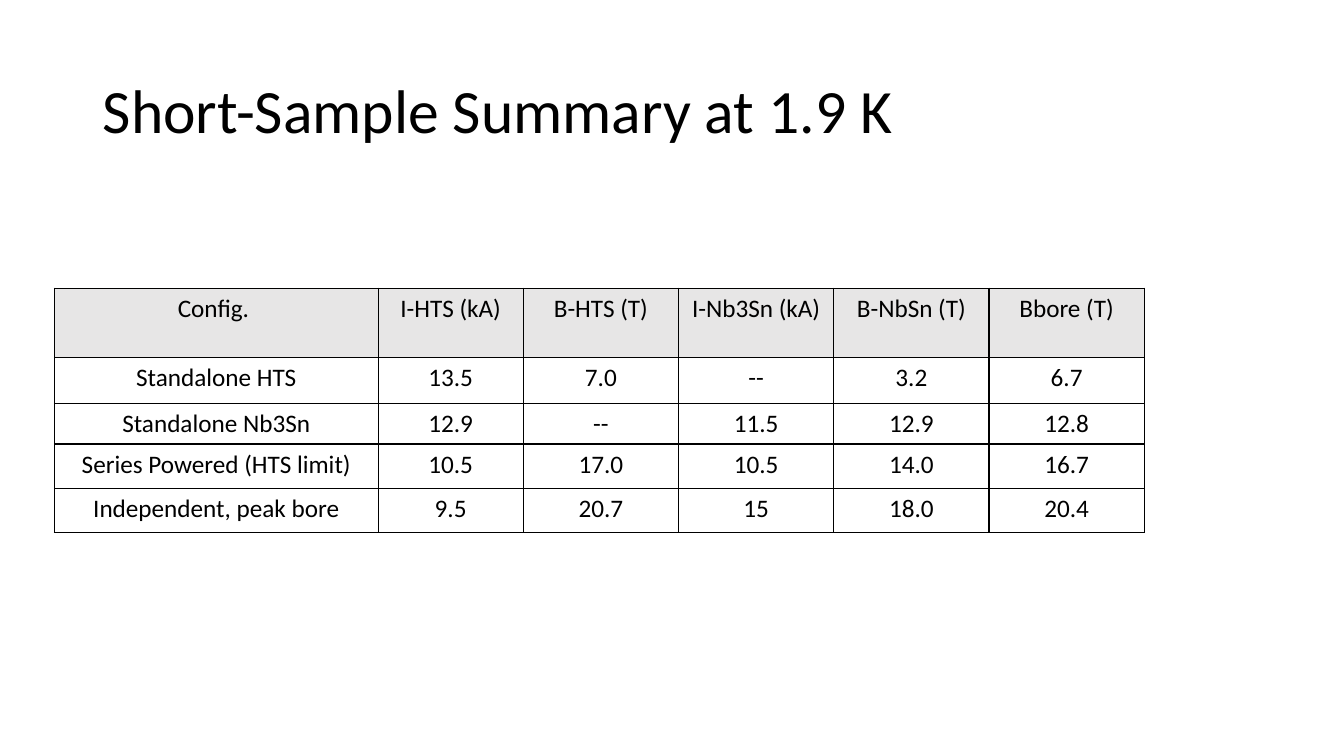
from lxml import etree
from pptx import Presentation
from pptx import util as u
from pptx.dml.color import RGBColor
from pptx.enum import text
from pptx.oxml import ns

PX = 9144
HUES = {"ink": "000000", "head": "E7E6E6"}
COLS = [321, 144] + [154] * 4
ROWS = [69, 45, 40, 44, 44]
DATA = [
    ["Config. ", "I-HTS (kA)", "B-HTS (T)", "I-Nb3Sn (kA)", "B-NbSn (T)", "Bbore (T)"],
    ["Standalone HTS", "13.5", "7.0", "--", "3.2", "6.7"],
    ["Standalone Nb3Sn", "12.9", "--", "11.5", "12.9", "12.8"],
    ["Series Powered (HTS limit)", "10.5", "17.0", "10.5", "14.0", "16.7"],
    ["Independent, peak bore", "9.5", "20.7", "15", "18.0", "20.4"],
]


def px(num):
    """Turn pixels into EMU."""
    return u.Emu(num * PX)


def rgb(name):
    """Look up a named colour."""
    return RGBColor.from_string(HUES[name])


def apply(obj, form):
    """Set each attribute named in a dict."""
    for key, val in form.items():
        setattr(obj, key, val)


def write(frame, words, size, form):
    """Write one styled paragraph into a text frame."""
    frame.text = words
    para = frame.paragraphs[0]
    apply(para, form)
    font = para.runs[0].font
    apply(font, {"name": "Calibri", "size": u.Pt(size), "bold": False})
    font.color.rgb = rgb("ink")


def add_title(slide, words):
    """Place and fill the title placeholder."""
    title = slide.shapes.title
    apply(title, {"left": px(92), "top": px(40), "width": px(1150), "height": px(145)})
    frame = title.text_frame
    apply(frame, {"vertical_anchor": text.MSO_ANCHOR.MIDDLE,
                  "auto_size": text.MSO_AUTO_SIZE.NONE, "word_wrap": True})
    write(frame, words, 44, {"alignment": text.PP_ALIGN.LEFT, "line_spacing": 0.9})


def add_edges(cell):
    """Draw a thin line on all four sides of a cell."""
    props = cell._tc.get_or_add_tcPr()
    for side in "LRTB":
        line = etree.SubElement(props, ns.qn(f"a:ln{side}"), w=str(u.Pt(1)))
        fill = etree.SubElement(line, ns.qn("a:solidFill"))
        etree.SubElement(fill, ns.qn("a:srgbClr"), val=HUES["ink"])


def add_grid(slide, left, top):
    """Build the table of short-sample values."""
    grid = slide.shapes.add_table(len(ROWS), len(COLS), px(left), px(top),
                                  px(sum(COLS)), px(sum(ROWS))).table
    apply(grid, {"first_row": False, "horz_banding": False})
    for col, wide in zip(grid.columns, COLS):
        col.width = px(wide)
    for row, high, words in zip(grid.rows, ROWS, DATA):
        row.height = px(high)
        for cell, word in zip(row.cells, words):
            write(cell.text_frame, word, 18, {"alignment": text.PP_ALIGN.CENTER})
            add_edges(cell)
            if words is DATA[0]:
                cell.fill.solid()
                cell.fill.fore_color.rgb = rgb("head")
            else:
                cell.fill.background()


def main():
    """Build and save the slide."""
    deck = Presentation()
    apply(deck, {"slide_width": px(1333), "slide_height": px(750)})
    slide = deck.slides.add_slide(deck.slide_layouts[5])
    add_title(slide, "Short-Sample Summary at 1.9 K")
    add_grid(slide, 54, 286)
    deck.save("out.pptx")


if __name__ == "__main__":
    main()
